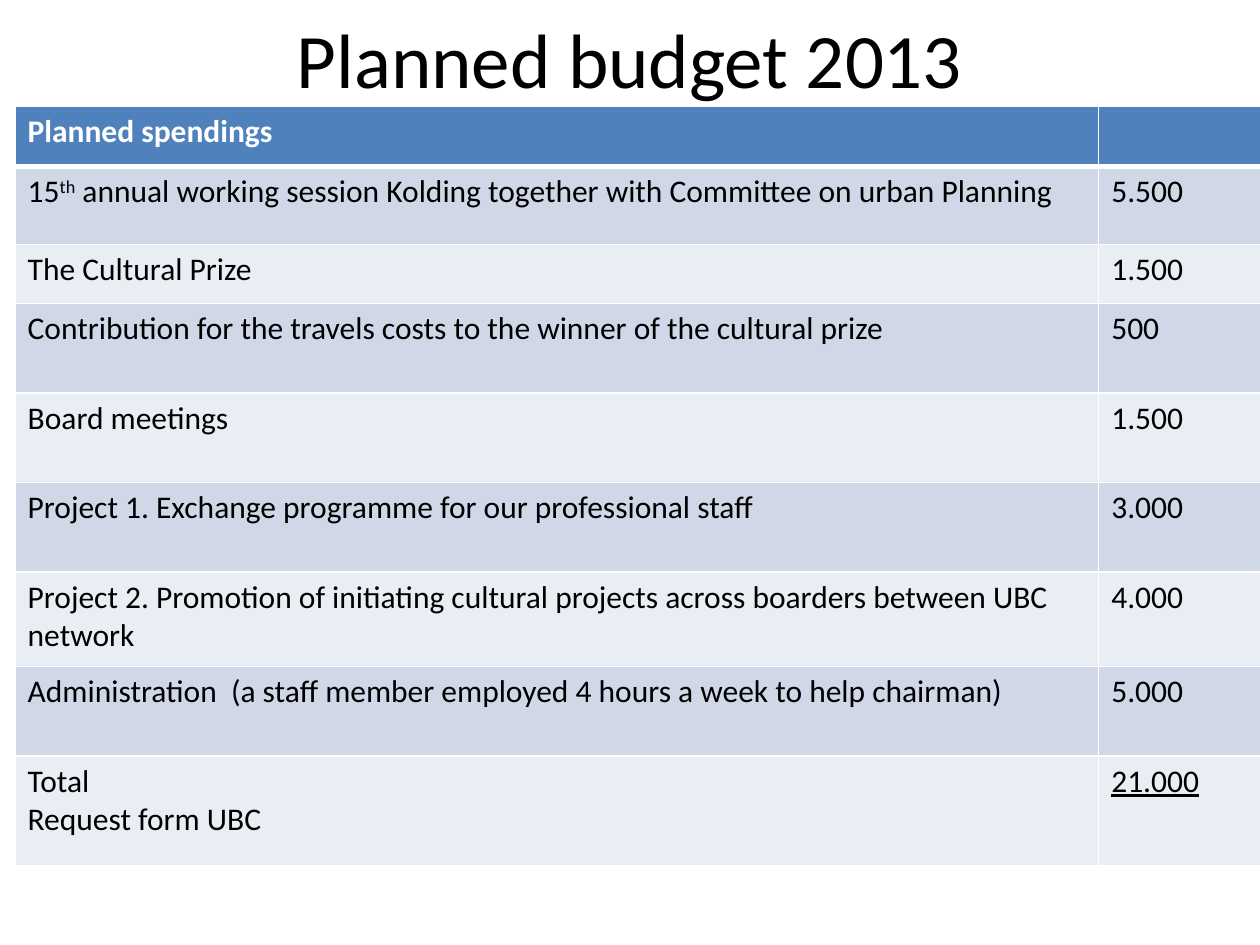
import lxml.etree
import pptx
import pptx.dml.color
import pptx.enum.text
import pptx.oxml.ns
import pptx.util

Inches = pptx.util.Inches
FONT = "Calibri"
WHITE, BLACK = "FFFFFF", "000000"
HEADER_FILL = "4F81BD"
BAND_FILLS = ("E9EDF4", "D0D8E8")
COLUMN_WIDTHS = (8.6, 1.29)
ROWS = [
    # height, spending (one list of spans per paragraph), amount
    (0.48, [["Planned spendings"]], ""),
    (0.62, [["15", ("th", {"baseline": "30000"}),
             " annual working session Kolding together with Committee on urban Planning"]], "5.500"),
    (0.47, [["The Cultural Prize"]], "1.500"),
    (0.71, [["Contribution for the travels costs to the winner of the cultural prize"]], "500"),
    (0.71, [["Board meetings"]], "1.500"),
    (0.71, [["Project 1. Exchange programme for our professional staff"]], "3.000"),
    (0.75, [["Project 2. Promotion of initiating cultural projects across boarders "
             "between UBC network"]], "4.000"),
    (0.71, [["Administration  (a staff member employed 4 hours a week to help chairman)"]], "5.000"),
    (0.87, [["Total"], ["Request form UBC"]], ("21.000", {"u": "sng"})),
]


def rgb(value):
    return pptx.dml.color.RGBColor.from_string(value)


def add_span(para, text, color, size, bold=False, extra=None):
    """Add a run; extra holds raw attributes such as baseline or underline."""
    span = para.add_run()
    span.text = text
    span.font.color.rgb = rgb(color)
    formats = {"name": FONT, "size": pptx.util.Pt(size), "bold": bold}
    for name, value in formats.items():
        setattr(span.font, name, value)
    for name, value in (extra or {}).items():
        span._r.get_or_add_rPr().set(name, value)


def set_borders(cell, bottom_width):
    """Draw white cell borders, placed before the fill as the schema asks."""
    qn = pptx.oxml.ns.qn
    widths = {"a:lnL": 1, "a:lnR": 1, "a:lnT": 1, "a:lnB": bottom_width}
    for index, (tag, width) in enumerate(widths.items()):
        line = lxml.etree.Element(qn(tag), w=str(pptx.util.Pt(width)))
        fill = lxml.etree.SubElement(line, qn("a:solidFill"))
        lxml.etree.SubElement(fill, qn("a:srgbClr"), val=WHITE)
        cell._tc.get_or_add_tcPr().insert(index, line)


def fill_cell(cell, paragraphs, is_header, fill):
    cell.fill.solid()
    cell.fill.fore_color.rgb = rgb(fill)
    set_borders(cell, 3 if is_header else 1)
    frame = cell.text_frame
    for index, spans in enumerate(paragraphs):
        para = frame.add_paragraph() if index else frame.paragraphs[0]
        for span in spans:
            text, extra = (span, None) if isinstance(span, str) else span
            if text:
                add_span(para, text, WHITE if is_header else BLACK, 18, is_header, extra)


def add_title(page, left, top, width, height):
    box = page.shapes.add_textbox(Inches(left), Inches(top), Inches(width), Inches(height))
    frame = box.text_frame
    frame.word_wrap = True
    frame.vertical_anchor = pptx.enum.text.MSO_ANCHOR.MIDDLE
    para = frame.paragraphs[0]
    para.alignment = pptx.enum.text.PP_ALIGN.CENTER
    add_span(para, "Planned budget 2013", BLACK, 44)


def add_budget_table(page, left, top):
    height = sum(row[0] for row in ROWS)
    table = page.shapes.add_table(len(ROWS), len(COLUMN_WIDTHS), Inches(left), Inches(top),
                                  Inches(sum(COLUMN_WIDTHS)), Inches(height)).table
    for column, width in zip(table.columns, COLUMN_WIDTHS):
        column.width = Inches(width)
    for index, (row_height, spending, amount) in enumerate(ROWS):
        table.rows[index].height = Inches(row_height)
        is_header = index == 0
        fill = HEADER_FILL if is_header else BAND_FILLS[index % 2]
        for column, paragraphs in enumerate((spending, [[amount]])):
            fill_cell(table.cell(index, column), paragraphs, is_header, fill)


def main():
    deck = pptx.Presentation()
    deck.slide_width, deck.slide_height = Inches(10), Inches(7.5)
    page = deck.slides.add_slide(deck.slide_layouts[6])
    add_title(page, 0.5, 0, 9, 0.92)
    add_budget_table(page, 0.12, 0.84)
    deck.save("out.pptx")


if __name__ == "__main__":
    main()
